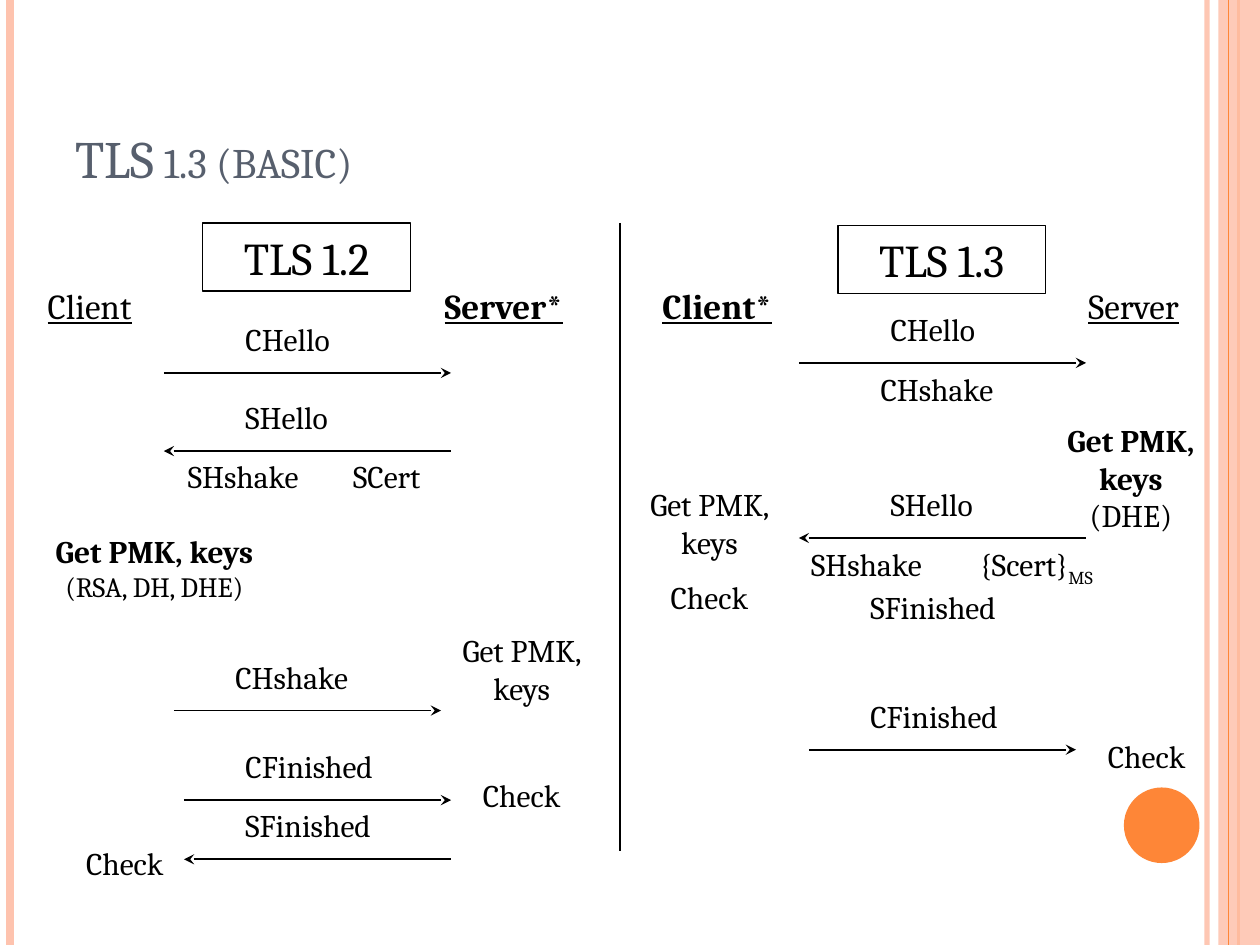
from lxml import etree
from pptx import Presentation
from pptx import util as u
from pptx.dml import color
from pptx.enum import shapes, text
from pptx.oxml import ns

FONT = "Cambria"
BLACK, ORANGE, PEACH, SLATE = "000000", "FE8637", "FEC3AE", "575F6D"


def rgb(value):
    """Turn a hex string into a colour."""
    return color.RGBColor.from_string(value)


def set_alpha(fill, percent):
    """Set the opacity of the solid fill found inside an XML element."""
    clr = fill.find(".//" + ns.qn("a:srgbClr"))
    etree.SubElement(clr, ns.qn("a:alpha"), val=str(percent * 1000))


def add_run(p, words, size=18, bold=False, underline=False, hue=BLACK, **attrs):
    """Add a formatted run; extra keywords become run attributes."""
    r = p.add_run()
    r.text = words
    f = r.font
    f.name, f.size, f.bold, f.underline = FONT, u.Pt(size), bold, underline
    f.color.rgb = rgb(hue)
    for name, value in attrs.items():
        f._element.set(name, value)
    return r


def add_text(s, words, x, y, w, h=0.4, centre=False, **fmt):
    """Add a wrapped text box with one formatted line of text."""
    sp = s.shapes.add_textbox(*map(u.Inches, (x, y, w, h)))
    tf = sp.text_frame
    tf.word_wrap = True
    p = tf.paragraphs[0]
    p.alignment = text.PP_ALIGN.CENTER if centre else text.PP_ALIGN.LEFT
    add_run(p, words, **fmt)
    return tf


def add_line(s, x1, y1, x2, y2, hue=BLACK, width=1, end=None, alpha=None):
    """Add a straight line, with an arrowhead at its headEnd or tailEnd."""
    ln = s.shapes.add_connector(
        shapes.MSO_CONNECTOR.STRAIGHT, *map(u.Inches, (x1, y1, x2, y2)))
    ln.line.color.rgb = rgb(hue)
    ln.line.width = u.Pt(width)
    sp_pr = ln._element.spPr
    if alpha:
        set_alpha(sp_pr, alpha)
    if end:
        etree.SubElement(sp_pr.find(ns.qn("a:ln")), ns.qn("a:" + end), type="stealth")
    etree.SubElement(sp_pr, ns.qn("a:effectLst"))


def add_shape(s, kind, x, y, w, h, fill=None, line=None):
    """Add a preset shape without shadow."""
    sp = s.shapes.add_shape(kind, *map(u.Inches, (x, y, w, h)))
    sp.shadow.inherit = False
    if fill:
        sp.fill.solid()
        sp.fill.fore_color.rgb = rgb(fill)
    else:
        sp.fill.background()
    if line:
        sp.line.color.rgb = rgb(line)
        sp.line.width = u.Pt(0.75)
    else:
        sp.line.fill.background()
    return sp


def add_frame(s, w, h):
    """Draw the stripes on both edges and the round ornament."""
    add_line(s, w - 0.42, 0, w - 0.42, h, PEACH, 3, alpha=93)
    add_line(s, 0.08, 0, 0.08, h, PEACH, 4.5)
    add_line(s, w - 0.17, 0, w - 0.17, h, ORANGE, 1.5)
    band = add_shape(s, shapes.MSO_SHAPE.RECTANGLE, w - 0.33, 0, 0.33, h, PEACH)
    set_alpha(band._element.spPr, 87)
    add_line(s, w - 0.25, 0, w - 0.25, h, ORANGE, 0.75)
    add_shape(s, shapes.MSO_SHAPE.OVAL, w - 1.08, h - 1.25, 0.6, 0.6, ORANGE)


def add_title(s, words, x, y, w, h):
    """Place the title placeholder and fill it."""
    sp = s.shapes.title
    sp.left, sp.top, sp.width, sp.height = map(u.Inches, (x, y, w, h))
    tf = sp.text_frame
    tf.vertical_anchor = text.MSO_ANCHOR.BOTTOM
    tf.auto_size = text.MSO_AUTO_SIZE.NONE
    tf.paragraphs[0].alignment = text.PP_ALIGN.LEFT
    add_run(tf.paragraphs[0], words, size=30, hue=SLATE, cap="small")


def add_badge(s, words, x, y):
    """Draw the outlined box that names the protocol version."""
    sp = add_shape(s, shapes.MSO_SHAPE.RECTANGLE, x, y, 1.65, 0.54, line=BLACK)
    p = sp.text_frame.paragraphs[0]
    p.alignment = text.PP_ALIGN.CENTER
    add_run(p, words, size=26)


def add_message(s, words, label_x, x1, x2, y, to_server=True):
    """Draw a message arrow with its label above it."""
    add_line(s, x1, y, x2, y, end="tailEnd" if to_server else "headEnd")
    add_text(s, words, label_x, y - 0.47, 1.5)


def add_parties(s, y, *parties):
    """Write the underlined party names; a star marks the bold one."""
    for words, x in parties:
        add_text(s, words, x, y, 1.5 if "*" in words else 1.25, 0.44,
                 size=20, underline=True, bold="*" in words)


def add_notes(s, x, y, notes):
    """Write centred remarks at offsets from the given corner."""
    for words, dx, dy, w, h in notes:
        add_text(s, words, x + dx, y + dy, w, h, centre=True)


def add_key_step(s, method, size, x, y, w, h):
    """Write the bold key derivation step with its method below."""
    tf = add_text(s, "Get PMK, keys", x, y, w, h, centre=True, bold=True)
    p = tf.add_paragraph()
    p.alignment = text.PP_ALIGN.CENTER
    add_run(p, method, size=size)


def add_tls12(s, x, y):
    """Draw the TLS 1.2 exchange from the given corner."""
    add_badge(s, "TLS 1.2", x + 1.61, y + 0.02)
    add_parties(s, y + 0.46, ("Client", x + 0.28), ("Server*", x + 3.43))
    for words, label, x1, x2, dy, to_server in (
            ("CHello", 1.85, 1.3, 3.58, 1.21, True),
            ("SHello", 1.85, 1.3, 3.58, 1.83, False),
            ("CHshake", 1.77, 1.38, 3.5, 3.89, True),
            ("CFinished", 1.85, 1.46, 3.58, 4.6, True),
            ("SFinished", 1.85, 1.46, 3.58, 5.07, False)):
        add_message(s, words, x + label, x + x1, x + x2, y + dy, to_server)
    add_notes(s, x, y, (
        ("SHshake", 1.22, 1.83, 1.42, 0.4),
        ("SCert", 2.48, 1.83, 1.18, 0.4),
        ("Get PMK, keys", 3.43, 3.21, 1.42, 0.71),
        ("Check", 3.43, 4.36, 1.42, 0.4),
        ("Check", 0.28, 4.9, 1.42, 0.4)))
    add_key_step(s, "(RSA, DH, DHE)", 16, x + 0.2, y + 2.42, 2.05, 0.98)


def add_tls13(s, x, y):
    """Draw the TLS 1.3 exchange from the given corner."""
    add_badge(s, "TLS 1.3", x + 1.73, y + 0.04)
    add_parties(s, y + 0.46, ("Client*", x + 0.24), ("Server", x + 3.62))
    for words, label, x1, x2, dy, to_server in (
            ("CHello", 2.05, 1.42, 3.7, 1.13, True),
            ("SHello", 2.05, 1.42, 3.7, 2.52, False),
            ("CFinished", 1.89, 1.5, 3.62, 4.2, True)):
        add_message(s, words, x + label, x + x1, x + x2, y + dy, to_server)
    for words, dx, dy in (("CHshake", 1.97, 1.14), ("SHshake", 1.42, 2.53),
                          ("SFinished", 1.89, 2.87)):
        add_text(s, words, x + dx, y + dy, 1.5)
    tf = add_text(s, "{Scert}", x + 2.52, y + 2.53, 1.57, centre=True)
    add_run(tf.paragraphs[0], "MS", baseline="-25000")
    add_notes(s, x, y, (
        ("Get PMK, keys", 0, 2.05, 1.42, 0.71),
        ("Check", 0, 2.79, 1.42, 0.4),
        ("Check", 3.47, 4.05, 1.42, 0.4)))
    add_key_step(s, "(DHE)", 18, x + 3.23, y + 1.54, 1.65, 1.01)


def main():
    """Build and save the slide."""
    prs = Presentation()
    prs.slide_width, prs.slide_height = u.Inches(10), u.Inches(7.5)
    s = prs.slides.add_slide(prs.slide_layouts[5])
    add_frame(s, 10, 7.5)
    add_title(s, "TLS 1.3 (basic)", 0.5, 0.3, 8.17, 1.25)
    add_line(s, 4.92, 1.77, 4.92, 6.75)
    add_tls12(s, 0, 1.75)
    add_tls13(s, 4.92, 1.75)
    prs.save("out.pptx")


if __name__ == "__main__":
    main()
